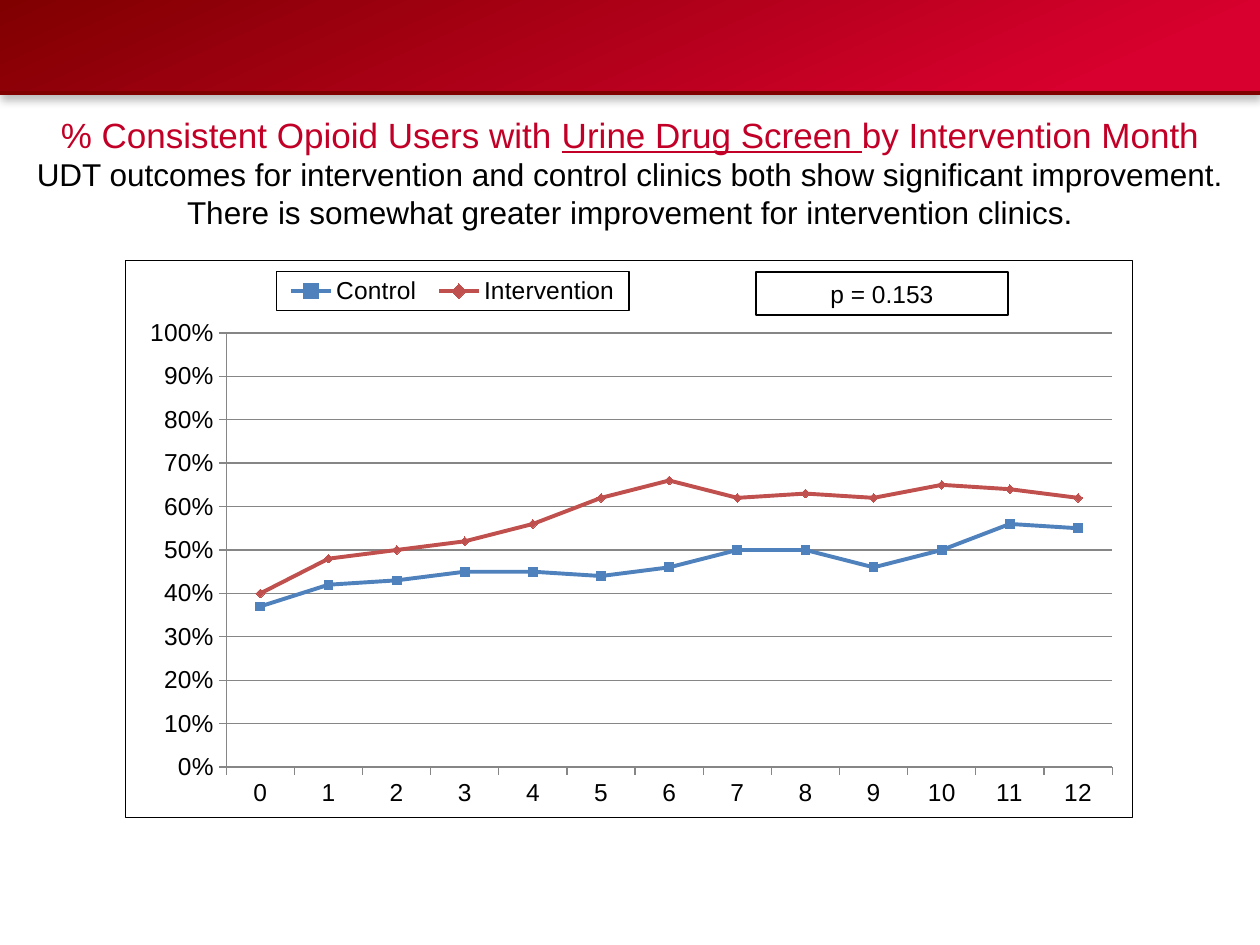
"""Build the slide on urine drug screens by intervention month."""
import pptx
import pptx.chart.data
import pptx.dml.color
import pptx.enum.chart
import pptx.enum.shapes
import pptx.enum.text
import pptx.oxml
import pptx.oxml.ns
import pptx.util

EMU_PER_PX = 914400 / 126
CENTER = pptx.enum.text.PP_ALIGN.CENTER
MIDDLE = pptx.enum.text.MSO_ANCHOR.MIDDLE
MARKERS = pptx.enum.chart.XL_MARKER_STYLE
OUTSIDE = pptx.enum.chart.XL_TICK_MARK.OUTSIDE
RED, DARK_RED, BRIGHT_RED = "C20027", "800000", "D8002E"
BLACK, GRAY = "000000", "868686"


def px(*lengths):
    return [pptx.util.Emu(round(length * EMU_PER_PX)) for length in lengths]


def color(value):
    return pptx.dml.color.RGBColor.from_string(value)


def element(tag, body=""):
    namespaces = pptx.oxml.ns.nsdecls("a", "c")
    return pptx.oxml.parse_xml(f"<{tag} {namespaces}>{body}</{tag}>")


def layout(x, y, w, h, inner=False):
    target = '<c:layoutTarget val="inner"/>' if inner else ""
    modes = '<c:xMode val="edge"/><c:yMode val="edge"/>'
    box = f'<c:x val="{x}"/><c:y val="{y}"/><c:w val="{w}"/><c:h val="{h}"/>'
    return element("c:layout", f"<c:manualLayout>{target}{modes}{box}</c:manualLayout>")


def border():
    solid = f'<a:solidFill><a:srgbClr val="{BLACK}"/></a:solidFill>'
    return element("c:spPr", f'<a:noFill/><a:ln w="9525">{solid}</a:ln>')


class SlideBuilder:
    """Holds the style and the current slide."""

    font_name = "Arial"

    def __init__(self, slide):
        self.slide = slide

    def style_font(self, font, size, value=BLACK):
        font.name = self.font_name
        font.size = pptx.util.Pt(size)
        font.color.rgb = color(value)

    def style_line(self, line, value, width):
        line.color.rgb = color(value)
        line.width = pptx.util.Pt(width)

    def rectangle(self, *box):
        kind = pptx.enum.shapes.MSO_SHAPE.RECTANGLE
        shape = self.slide.shapes.add_shape(kind, *px(*box))
        shape.shadow.inherit = False
        return shape

    def band(self, *box):
        band = self.rectangle(*box)
        band.line.fill.background()
        band.fill.gradient()
        band.fill.gradient_angle = 360 - 66
        stops = zip(band.fill.gradient_stops, (0, 0.87), (DARK_RED, BRIGHT_RED))
        for stop, position, value in stops:
            stop.position = position
            stop.color.rgb = color(value)
        effects = band.element.spPr.find(pptx.oxml.ns.qn("a:effectLst"))
        effects.append(pptx.oxml.parse_xml(
            f'<a:outerShdw {pptx.oxml.ns.nsdecls("a")} blurRad="63500" dist="48260" '
            f'dir="5400000" rotWithShape="0"><a:srgbClr val="{BLACK}">'
            '<a:alpha val="25000"/></a:srgbClr></a:outerShdw>'))

    def rule(self, *ends):
        kind = pptx.enum.shapes.MSO_CONNECTOR.STRAIGHT
        rule = self.slide.shapes.add_connector(kind, *px(*ends))
        self.style_line(rule.line, DARK_RED, 2)
        rule.element.spPr.append(element("a:effectLst"))

    def title(self, box, heading, message):
        title = self.slide.shapes.title
        title.left, title.top, title.width, title.height = px(*box)
        frame = title.text_frame
        frame.word_wrap = True
        frame.auto_size = pptx.enum.text.MSO_AUTO_SIZE.NONE
        frame.vertical_anchor = MIDDLE
        paragraph = frame.paragraphs[0]
        paragraph.alignment = CENTER
        for text, underlined in heading:
            run = paragraph.add_run()
            run.text = text
            self.style_font(run.font, 20, RED)
            run.font.underline = underlined
        paragraph.add_line_break()
        run = paragraph.add_run()
        run.text = message
        self.style_font(run.font, 18)

    def label(self, text, *box):
        label = self.rectangle(*box)
        label.fill.background()
        self.style_line(label.line, BLACK, 0.75)
        frame = label.text_frame
        frame.text = text
        frame.word_wrap = True
        frame.vertical_anchor = MIDDLE
        frame.paragraphs[0].alignment = CENTER
        self.style_font(frame.paragraphs[0].runs[0].font, 14)

    def line_chart(self, box, categories, series):
        data = pptx.chart.data.CategoryChartData(number_format="0%")
        data.categories = categories
        for name, values, _, _ in series:
            data.add_series(name, values)
        kind = pptx.enum.chart.XL_CHART_TYPE.LINE_MARKERS
        chart = self.slide.shapes.add_chart(kind, *px(*box), data).chart
        self.style_font(chart.font, 10)
        chart.has_title = False
        chart.plots[0].vary_by_categories = False
        for line, (_, _, value, marker) in zip(chart.plots[0].series, series):
            line.smooth = False
            self.style_line(line.format.line, value, 2.25)
            line.marker.style = marker
            line.marker.size = 5
            line.marker.format.fill.solid()
            line.marker.format.fill.fore_color.rgb = color(value)
            self.style_line(line.marker.format.line, value, 0.75)
        for axis in (chart.category_axis, chart.value_axis):
            axis.major_tick_mark = OUTSIDE
            axis.minor_tick_mark = pptx.enum.chart.XL_TICK_MARK.NONE
            self.style_font(axis.tick_labels.font, 14)
            self.style_line(axis.format.line, GRAY, 0.75)
        percent = chart.value_axis
        percent.minimum_scale, percent.maximum_scale = 0, 1
        percent.major_unit = 0.1
        percent.tick_labels.number_format = "0%"
        percent.tick_labels.number_format_is_linked = False
        percent.has_major_gridlines = True
        self.style_line(percent.major_gridlines.format.line, GRAY, 0.75)
        chart.has_legend = True
        chart.legend.position = pptx.enum.chart.XL_LEGEND_POSITION.TOP
        chart.legend.include_in_layout = False
        self.style_font(chart.legend.font, 14)
        self.frame_chart(chart.element)

    def frame_chart(self, space):
        qn = pptx.oxml.ns.qn
        body = space.find(qn("c:chart"))
        body.addnext(border())
        plot = body.find(qn("c:plotArea"))
        for automatic in plot.findall(qn("c:layout")):
            plot.remove(automatic)
        plot.insert(0, layout(0.1, 0.13, 0.88, 0.78, inner=True))
        legend = body.find(qn("c:legend"))
        for automatic in legend.findall(qn("c:layout")):
            legend.remove(automatic)
        legend.find(qn("c:legendPos")).addnext(layout(0.15, 0.02, 0.35, 0.07))
        legend.find(qn("c:overlay")).addnext(border())


def main():
    deck = pptx.Presentation()
    deck.slide_width, deck.slide_height = px(1260, 945)
    builder = SlideBuilder(deck.slides.add_slide(deck.slide_layouts[5]))
    builder.band(0, 0, 1261, 93)
    builder.rule(0, 93, 1261, 93)
    builder.title(
        (0, 93, 1260, 158),
        [("% Consistent Opioid Users with ", False),
         ("Urine Drug Screen ", True),
         ("by Intervention Month", False)],
        "UDT outcomes for intervention and control clinics both show significant "
        "improvement. There is somewhat greater improvement for intervention clinics.")
    control = (0.37, 0.42, 0.43, 0.45, 0.45, 0.44, 0.46, 0.5, 0.5, 0.46, 0.5, 0.56, 0.55)
    intervention = (0.4, 0.48, 0.5, 0.52, 0.56, 0.62, 0.66, 0.62, 0.63, 0.62, 0.65, 0.64, 0.62)
    builder.line_chart(
        (125, 260, 1008, 558),
        [str(month) for month in range(13)],
        [("Control", control, "4F81BD", MARKERS.SQUARE),
         ("Intervention", intervention, "C0504D", MARKERS.DIAMOND)])
    builder.label("p = 0.153", 756, 272, 252, 43)
    deck.save("out.pptx")


if __name__ == "__main__":
    main()
